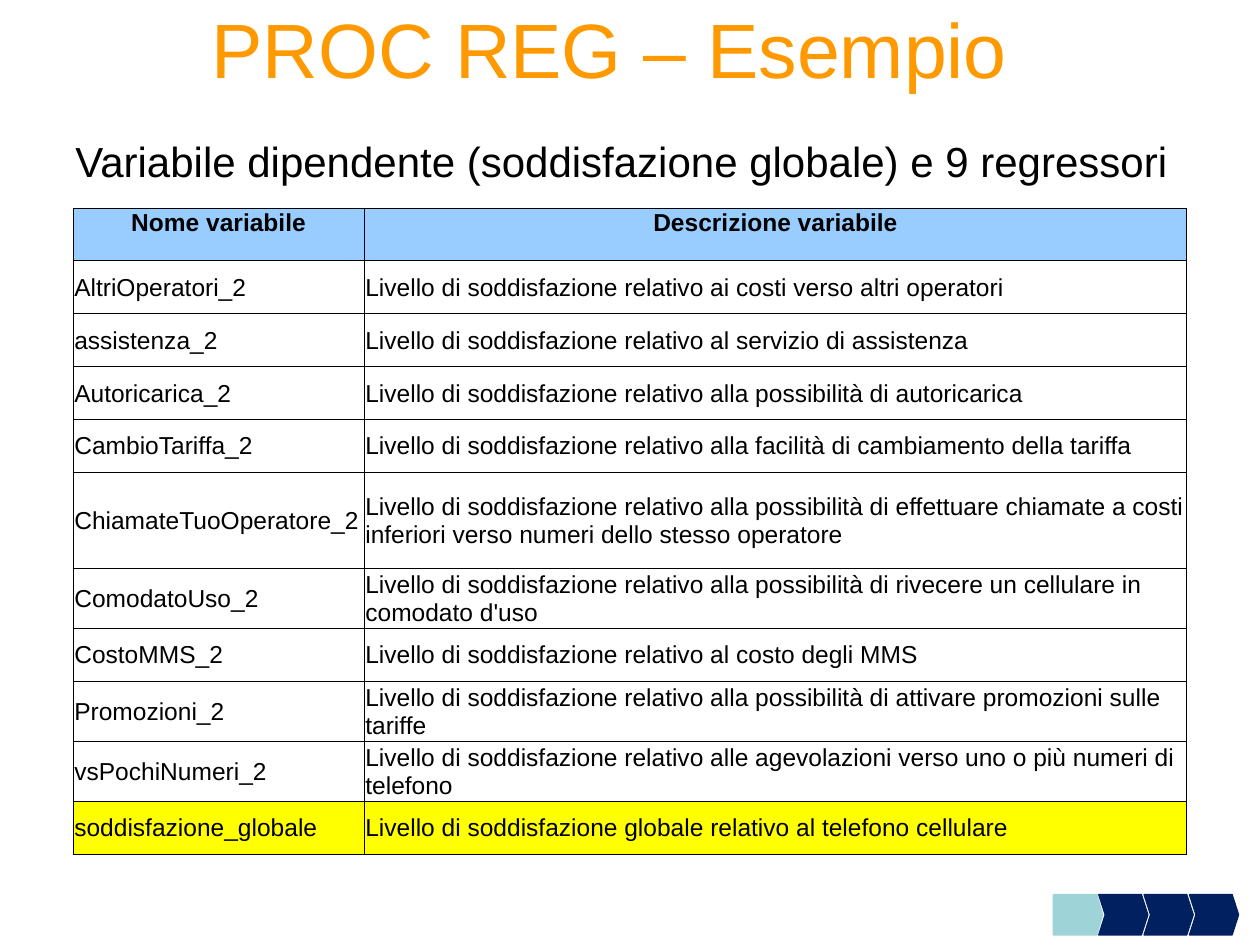
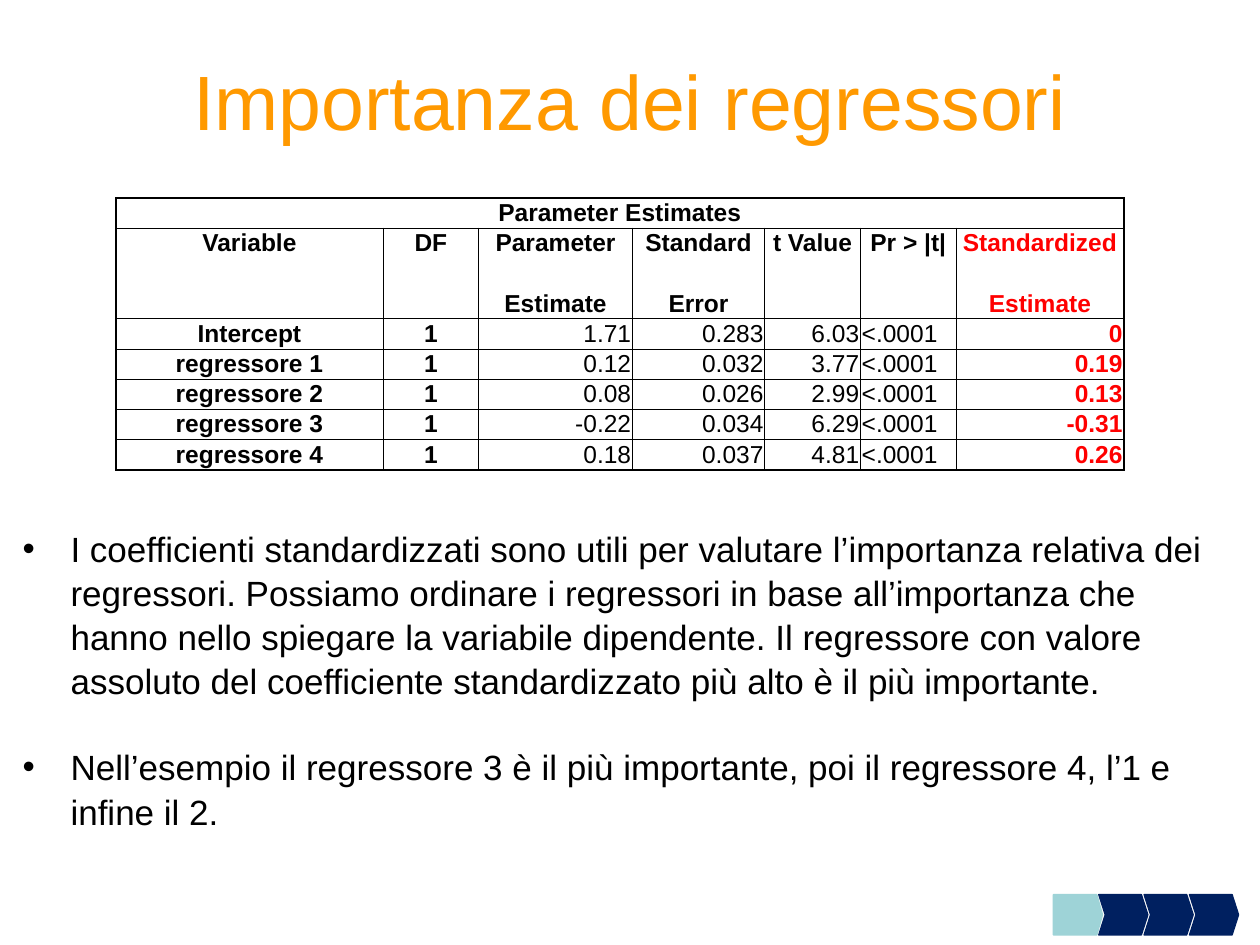
from lxml.etree import SubElement
from pptx import Presentation
from pptx.dml.color import RGBColor
from pptx.enum.shapes import MSO_SHAPE as Shape
from pptx.enum.text import MSO_ANCHOR as Anchor, PP_ALIGN as Align
from pptx.oxml.ns import qn
from pptx.util import Pt

PX = 9144  # 100 px to the inch
FONT = "Arial"
COLORS = {"title": "FF9900", "text": "000000", "accent": "FF0000", "paper": "FFFFFF",
          "header": "99CCFF", "highlight": "FFFF00", "navy": "002060", "teal": "9ED3D7"}
THIN, THICK = 0.5, 1


def style_text(paragraph, size, color="text", bold=False, align=Align.LEFT):
    paragraph.alignment = align
    for run in paragraph.runs:
        run.font.name = FONT
        run.font.size = Pt(size)
        run.font.bold = bold
        run.font.color.rgb = RGBColor.from_string(COLORS[color])


def style_cell(cell, text, fill, edges, color="text", bold=False, align=Align.LEFT, anchor=Anchor.TOP):
    cell.margin_left = cell.margin_right = cell.margin_top = PX
    cell.margin_bottom = 0
    cell.vertical_anchor = anchor
    cell.text_frame.text = text
    style_text(cell.text_frame.paragraphs[0], 14, color, bold, align)
    # Borders precede the fill in the cell properties
    properties = cell._tc.get_or_add_tcPr()
    for side, width in edges.items():
        line = SubElement(properties, qn(f"a:ln{side}"), w=str(Pt(width)))
        if width:
            solid = SubElement(line, qn("a:solidFill"))
            SubElement(solid, qn("a:srgbClr"), val=COLORS["text"])
        else:
            SubElement(line, qn("a:noFill"))
    cell.fill.solid()
    cell.fill.fore_color.rgb = RGBColor.from_string(COLORS[fill])


prs = Presentation()
prs.slide_width, prs.slide_height = 1000 * PX, 750 * PX
example = prs.slides.add_slide(prs.slide_layouts[5])
importance = prs.slides.add_slide(prs.slide_layouts[1])

# Shared title style and progress arrows
for slide, heading, left, top in [
    (example, "PROC REG – Esempio", 34, -25),
    (importance, "Importanza dei regressori", 50, 17),
]:
    title = slide.shapes.title
    title.left, title.top, title.width, title.height = left * PX, top * PX, 900 * PX, 125 * PX
    title.text_frame.text = heading
    title.text_frame.vertical_anchor = Anchor.MIDDLE
    style_text(title.text_frame.paragraphs[0], 44, "title", align=Align.CENTER)

    for step in range(4):
        outline, notch, color = (Shape.CHEVRON, 0.16, "navy") if step else (Shape.PENTAGON, 0.14, "teal")
        arrow = slide.shapes.add_shape(outline, (836 + 36 * step) * PX, 710 * PX, 39 * PX, 32 * PX)
        arrow.adjustments[0] = notch
        arrow.shadow.inherit = False
        arrow.fill.solid()
        arrow.fill.fore_color.rgb = arrow.line.color.rgb = RGBColor.from_string(COLORS[color])
        arrow.line.width = Pt(0.75)

# Slide 1: subtitle
subtitle = example.shapes.add_textbox(50 * PX, 103 * PX, 892 * PX, 50 * PX)
subtitle.text_frame.word_wrap = True
subtitle.text_frame.text = "Variabile dipendente (soddisfazione globale) e 9 regressori"
style_text(subtitle.text_frame.paragraphs[0], 24)

# Slide 1: variables and their descriptions, with row heights
LEVEL = "Livello di soddisfazione "
variables = [
    ("Nome variabile", "Descrizione variabile", 42),
    ("AltriOperatori_2", LEVEL + "relativo ai costi verso altri operatori", 42),
    ("assistenza_2", LEVEL + "relativo al servizio di assistenza", 42),
    ("Autoricarica_2", LEVEL + "relativo alla possibilità di autoricarica", 42),
    ("CambioTariffa_2", LEVEL + "relativo alla facilità di cambiamento della tariffa", 42),
    ("ChiamateTuoOperatore_2", LEVEL + "relativo alla possibilità di effettuare chiamate a costi "
     "inferiori verso numeri dello stesso operatore", 76),
    ("ComodatoUso_2", LEVEL + "relativo alla possibilità di rivecere un cellulare in comodato d'uso", 43),
    ("CostoMMS_2", LEVEL + "relativo al costo degli MMS", 42),
    ("Promozioni_2", LEVEL + "relativo alla possibilità di attivare promozioni sulle tariffe", 43),
    ("vsPochiNumeri_2", LEVEL + "relativo alle agevolazioni verso uno o più numeri di telefono", 43),
    ("soddisfazione_globale", LEVEL + "globale relativo al telefono cellulare", 42),
]
variable_table = example.shapes.add_table(len(variables), 2, 58 * PX, 165 * PX, 884 * PX, 499 * PX).table
for column, width in zip(variable_table.columns, (231, 653)):
    column.width = width * PX
for r, (name, description, height) in enumerate(variables):
    variable_table.rows[r].height = height * PX
    is_header = r == 0
    fill = "header" if is_header else "highlight" if r == len(variables) - 1 else "paper"
    for c, text in enumerate((name, description)):
        style_cell(variable_table.cell(r, c), text, fill, dict.fromkeys("LRTB", THIN), bold=is_header,
                   align=Align.CENTER if is_header else Align.LEFT,
                   anchor=Anchor.TOP if is_header else Anchor.MIDDLE)

# Slide 2: parameter estimates
estimates = [
    ["Parameter Estimates"] + [""] * 6,
    ["Variable", "DF", "Parameter", "Standard", "t Value", "Pr > |t|", "Standardized"],
    ["", "", "Estimate", "Error", "", "", "Estimate"],
    ["Intercept", "1", "1.71", "0.283", "6.03", "<.0001", "0"],
    ["regressore 1", "1", "0.12", "0.032", "3.77", "<.0001", "0.19"],
    ["regressore 2", "1", "0.08", "0.026", "2.99", "<.0001", "0.13"],
    ["regressore 3", "1", "-0.22", "0.034", "6.29", "<.0001", "-0.31"],
    ["regressore 4", "1", "0.18", "0.037", "4.81", "<.0001", "0.26"],
]
HEADER_ROWS, LAST_ROW, LAST_COL = 3, 7, 6
column_aligns = [Align.CENTER] * 2 + [Align.RIGHT] * 3 + [Align.LEFT, Align.RIGHT]
estimate_table = importance.shapes.add_table(8, 7, 92 * PX, 157 * PX, 800 * PX, 216 * PX).table
for column, width in zip(estimate_table.columns, (212, 76, 122, 105, 76, 76, 133)):
    column.width = width * PX
for r, row in enumerate(estimate_table.rows):
    row.height = (48 if r == 1 else 24) * PX
estimate_table.cell(0, 0).merge(estimate_table.cell(0, LAST_COL))
for c in (0, 1, 4, 5):
    estimate_table.cell(1, c).merge(estimate_table.cell(2, c))

for r, values in enumerate(estimates):
    for c, text in enumerate(values):
        cell = estimate_table.cell(r, c)
        if cell.is_spanned:
            continue
        in_header = r < HEADER_ROWS
        two_line_header = r in (1, 2) and not cell.is_merge_origin
        edges = {
            "L": THICK if c == 0 else THIN,
            "R": THICK if c == LAST_COL or r == 0 else THIN,
            "T": THICK if r == 0 else 0 if two_line_header and r == 2 else THIN,
            "B": THICK if r == LAST_ROW else 0 if two_line_header and r == 1 else THIN,
        }
        style_cell(cell, text, "paper", edges,
                   color="accent" if c == LAST_COL and r > 0 else "text",
                   bold=in_header or c in (0, 1, LAST_COL),
                   align=Align.CENTER if in_header else column_aligns[c])

# Slide 2: comments on the coefficients
comments = importance.placeholders[1]
comments.left, comments.top, comments.width, comments.height = 8 * PX, 412 * PX, 971 * PX, 246 * PX
comments.text_frame.text = "\n".join([
    "I coefficienti standardizzati sono utili per valutare l’importanza relativa dei regressori. "
    "Possiamo ordinare i regressori in base all’importanza che hanno nello spiegare la variabile "
    "dipendente. Il regressore con valore assoluto del coefficiente standardizzato più alto è il "
    "più importante.",
    "Nell’esempio il regressore 3 è il più importante, poi il regressore 4, l’1 e infine il 2.",
])
for paragraph, gap in zip(comments.text_frame.paragraphs, (0, 24)):
    style_text(paragraph, 20)
    paragraph.space_before = Pt(gap)
    paragraph.line_spacing = 1.05
    indents = paragraph._p.get_or_add_pPr()
    indents.set("marL", str(38 * PX))
    indents.set("indent", str(-38 * PX))

prs.save("out.pptx")
